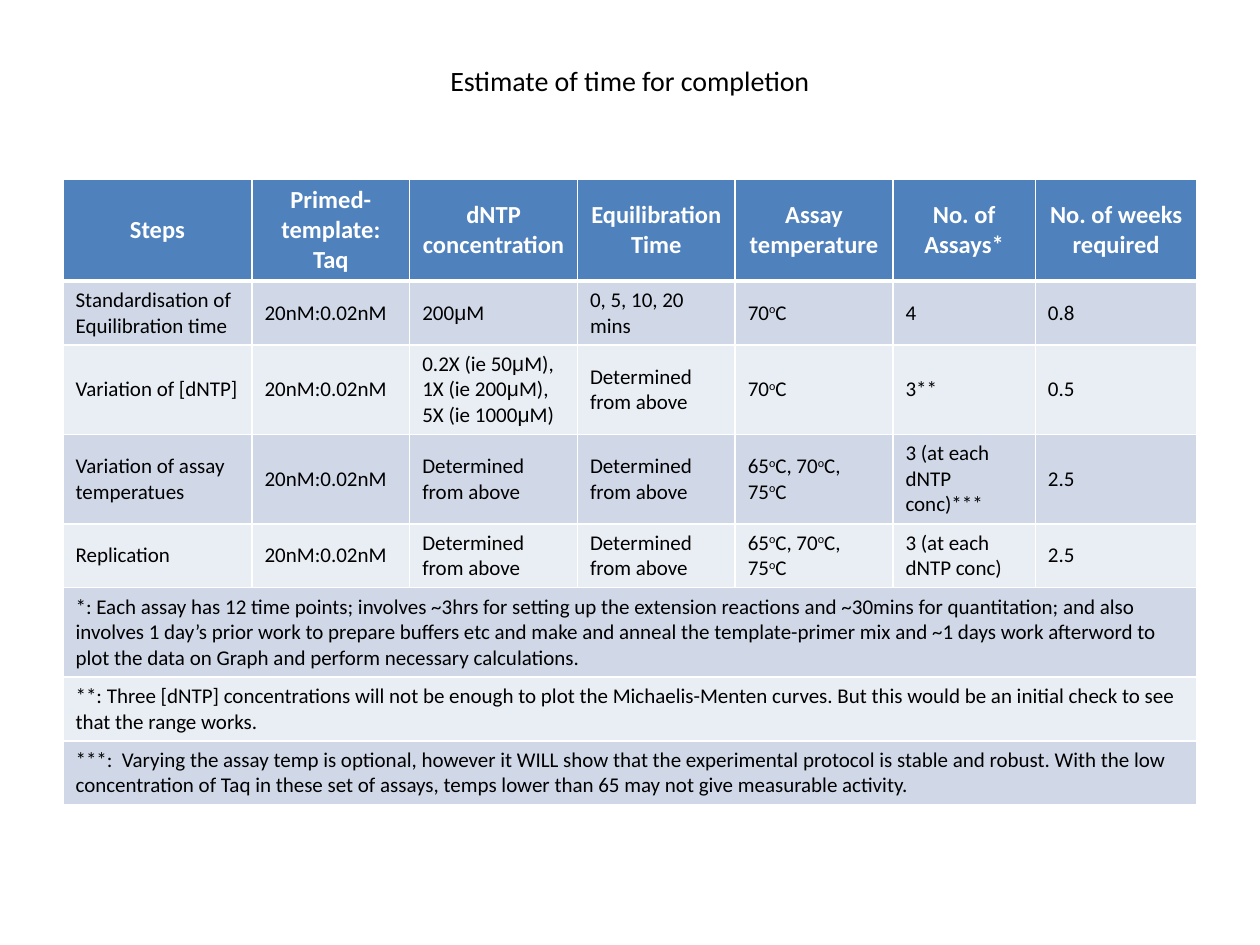
from pptx import Presentation
from pptx.dml.color import RGBColor
from pptx.enum.text import MSO_ANCHOR as Anchor, PP_ALIGN as Align
from pptx.oxml.ns import qn
from pptx.util import Cm, Pt
from lxml.etree import SubElement

FONT = "Calibri"
BLACK, WHITE, HEADER_BLUE = "000000", "FFFFFF", "4F81BD"
BANDS = ["D0D8E8", "E9EDF4"]
COLUMN_WIDTHS = [3.81, 3.18, 3.38, 3.18, 3.18, 2.87, 3.26]
ROW_HEIGHT = 1.04

HEADERS = ["Steps", "Primed-template: Taq", "dNTP concentration", "Equilibration Time",
           "Assay temperature", "No. of Assays*", "No. of weeks required"]
RATIO = "20nM:0.02nM"
ABOVE = "Determined from above"
THREE_TEMPERATURES = "65|o|C, 70|o|C, 75|o|C"
# Bars set off the superscript o and the Greek letter as runs of their own.
STEPS = [
    ["Standardisation of Equilibration time", RATIO, "200|μ|M", "0, 5, 10, 20 mins",
     "70|o|C", "4", "0.8"],
    ["Variation of [dNTP]", RATIO, "0.2X (ie 50|μ|M),\n1X (ie 200|μ|M),\n5X (ie 1000|μ|M)",
     ABOVE, "70|o|C", "3**", "0.5"],
    ["Variation of assay temperatues", RATIO, ABOVE, ABOVE, THREE_TEMPERATURES,
     "3 (at each dNTP conc)***", "2.5"],
    ["Replication", RATIO, ABOVE, ABOVE, THREE_TEMPERATURES, "3 (at each dNTP conc)", "2.5"],
]
NOTES = [
    "*: Each assay has 12 time points; involves ~3hrs for setting up the extension reactions "
    "and ~30mins for quantitation; and also involves 1 day’s prior work to prepare buffers etc "
    "and make and anneal the template-primer mix and ~1 days work afterword to plot the data "
    "on Graph and perform necessary calculations.",
    "**: Three [dNTP] concentrations will not be enough to plot the Michaelis-Menten curves. "
    "But this would be an initial check to see that the range works.",
    "***:  Varying the assay temp is optional, however it WILL show that the experimental "
    "protocol is stable and robust. With the low concentration of Taq in these set of assays, "
    "temps lower than 65 may not give measurable activity.",
]


def color(value):
    return RGBColor.from_string(value)


def style_paragraph(para, size, text_color, align, bold=False):
    para.alignment = align
    para.font.name = FONT
    para.font.size = Pt(size)
    para.font.bold = bold
    para.font.color.rgb = color(text_color)


def write_runs(para, text):
    for part in text.split("|"):
        span = para.add_run()
        span.text = part
        if part == "o":
            span.font._element.set("baseline", "30000")
        elif part == "μ":
            span.font.name = "Arial"


def set_borders(cell, widths):
    properties = cell._tc.get_or_add_tcPr()
    for side, width in widths.items():
        line = SubElement(properties, qn(f"a:ln{side}"), w=str(Pt(width)))
        solid = SubElement(line, qn("a:solidFill"))
        SubElement(solid, qn("a:srgbClr"), val=WHITE)


def fill_cell(cell, text, fill, size, text_color, align, bold, bottom):
    set_borders(cell, {"L": 1, "R": 1, "B": bottom})
    cell.fill.solid()
    cell.fill.fore_color.rgb = color(fill)
    cell.vertical_anchor = Anchor.MIDDLE
    for index, line in enumerate(text.split("\n")):
        frame = cell.text_frame
        para = frame.add_paragraph() if index else frame.paragraphs[0]
        write_runs(para, line)
        style_paragraph(para, size, text_color, align, bold)


def place_title(page, left, top, width, height):
    title = page.shapes.title
    title.left, title.top, title.width, title.height = map(Cm, (left, top, width, height))
    title.text_frame.vertical_anchor = Anchor.MIDDLE
    title.text_frame.text = "Estimate of time for completion"
    style_paragraph(title.text_frame.paragraphs[0], 16, BLACK, Align.CENTER)


def place_schedule(page, left, top, width, height):
    rows = [HEADERS, *STEPS, *([note] for note in NOTES)]
    box = page.shapes.add_table(len(rows), len(HEADERS), *map(Cm, (left, top, width, height)))
    table = box.table
    for column, column_width in zip(table.columns, COLUMN_WIDTHS):
        column.width = Cm(column_width)
    for row in table.rows:
        row.height = Cm(ROW_HEIGHT)
    box.height = Cm(height)
    for row_index, texts in enumerate(rows):
        if len(texts) == 1:
            table.cell(row_index, 0).merge(table.cell(row_index, len(HEADERS) - 1))
        if row_index == 0:
            look = HEADER_BLUE, 14, WHITE, Align.CENTER, True, 3
        else:
            look = BANDS[(row_index - 1) % 2], 12, BLACK, Align.LEFT, False, 1
        for column_index, text in enumerate(texts):
            fill_cell(table.cell(row_index, column_index), text, *look)


def main():
    deck = Presentation()
    deck.slide_width, deck.slide_height = Cm(25.4), Cm(19.05)
    page = deck.slides.add_slide(deck.slide_layouts[5])
    place_title(page, 1.27, 0.03, 22.86, 3.18)
    place_schedule(page, 1.27, 3.61, 22.86, 12.45)
    deck.save("out.pptx")


if __name__ == "__main__":
    main()
